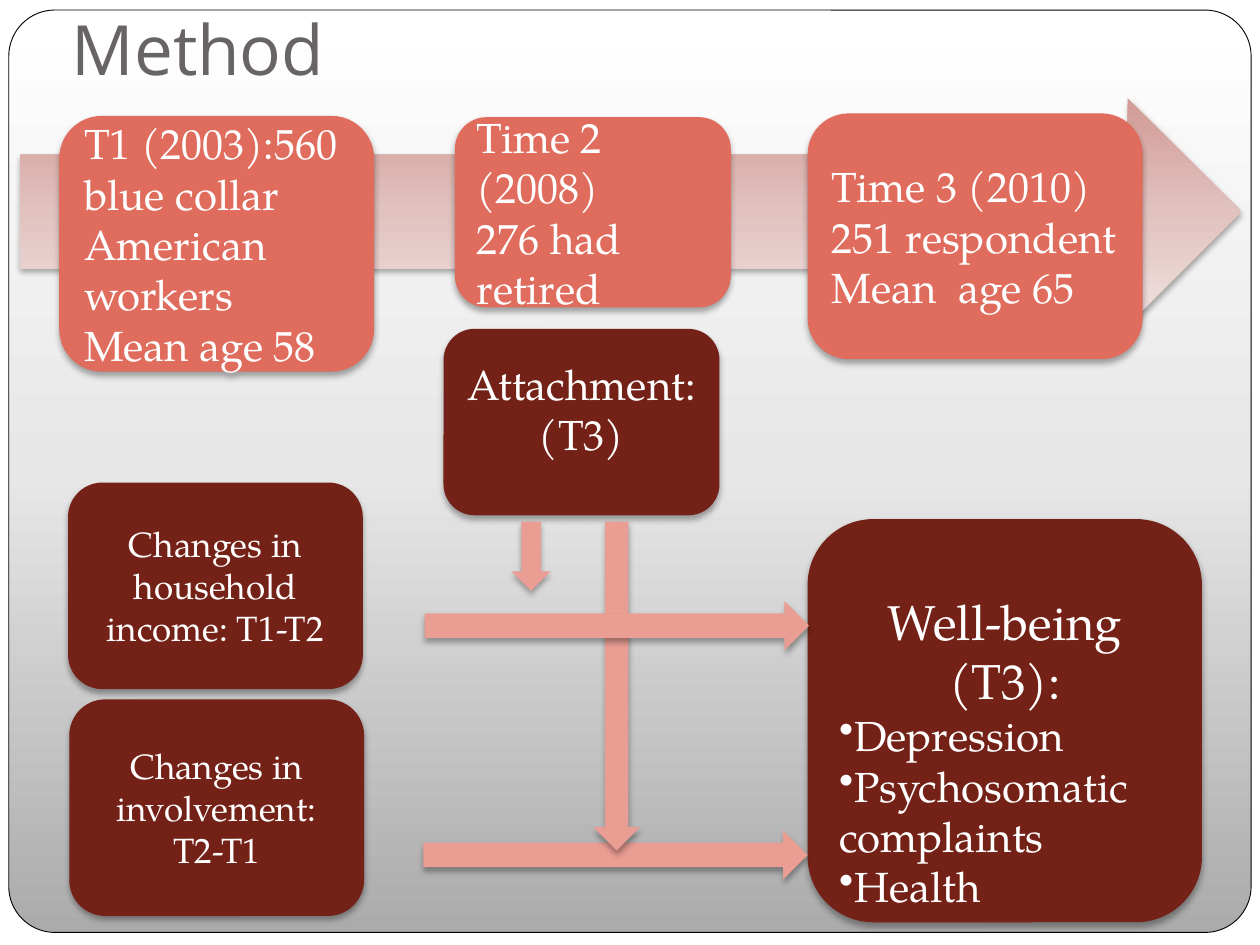
import pptx
import pptx.dml.color
import pptx.enum.shapes
import pptx.enum.text
import pptx.util
from lxml import etree
from pptx.oxml.ns import qn

Inches = pptx.util.Inches
Pt = pptx.util.Pt
Shape = pptx.enum.shapes.MSO_SHAPE
Anchor = pptx.enum.text.MSO_ANCHOR
Align = pptx.enum.text.PP_ALIGN

SERIF, SANS = "TeX Gyre Pagella", "Open Sans"
WHITE, GREY, BLACK = "FFFFFF", "696464", "000000"
MAROON, CORAL, PINK = "742217", "DF6C5D", "E99D93"
SILVER = [(0, "ABABAB"), (50, "E7E7E7"), (100, WHITE)]
ROSE = [(0, "D29A94"), (50, "E1C2BF"), (100, "F0E1E0")]


def rgb(hex_color):
    return pptx.dml.color.RGBColor.from_string(hex_color)


def apply(target, values):
    for name, value in values.items():
        setattr(target, name, value)


def add_xml(parent, tag, **attributes):
    return etree.SubElement(parent, qn(tag), attributes)


class MethodSlide:
    """Holds the style and the current slide."""

    def __init__(self, deck):
        self.slide = deck.slides.add_slide(deck.slide_layouts[6])
        background = self.slide.background.fill
        background.solid()
        background.fore_color.rgb = rgb(WHITE)

    def shape(self, kind, place, fill=None, shadow=True):
        item = self.slide.shapes.add_shape(kind, *map(Inches, place))
        item.line.fill.background()
        item.shadow.inherit = False
        if fill:
            item.fill.solid()
            item.fill.fore_color.rgb = rgb(fill)
        if shadow:
            effects = item._element.spPr.find(qn("a:effectLst"))
            cast = add_xml(effects, "a:outerShdw", blurRad=str(Pt(3.5)),
                           dist=str(Pt(2.2)), dir="5400000", rotWithShape="0")
            color = add_xml(cast, "a:srgbClr", val=BLACK)
            add_xml(color, "a:alpha", val="32000")
        return item

    def gradient(self, item, stops, angle):
        item.fill.gradient()
        item.fill.gradient_angle = 360 - angle
        stop_list = item._element.spPr.find(qn("a:gradFill")).find(qn("a:gsLst"))
        for old in list(stop_list):
            stop_list.remove(old)
        for position, color in stops:
            stop = add_xml(stop_list, "a:gs", pos=str(position * 1000))
            add_xml(stop, "a:srgbClr", val=color)

    def fill_text(self, frame, lines, font, color, align=Align.LEFT, **frame_format):
        """Each line is (text, size) or (text, size, bullet)."""
        apply(frame, {"word_wrap": True, "vertical_anchor": Anchor.MIDDLE, **frame_format})
        for index, (text, size, *bullet) in enumerate(lines):
            paragraph = frame.paragraphs[0] if index == 0 else frame.add_paragraph()
            paragraph.alignment = Align.LEFT if bullet else align
            if bullet:
                add_xml(paragraph._p.get_or_add_pPr(), "a:buChar", char=bullet[0])
            run = paragraph.add_run()
            run.text = text
            apply(run.font, {"name": font, "size": Pt(size)})
            run.font.color.rgb = rgb(color)

    def title(self, place, text):
        box = self.slide.shapes.add_textbox(*map(Inches, place))
        self.fill_text(box.text_frame, [(text, 39.6)], SANS, GREY,
                       vertical_anchor=Anchor.BOTTOM, margin_bottom=Inches(0.1))

    def card(self, place, fill, lines, align=Align.CENTER, **frame_format):
        item = self.shape(Shape.ROUNDED_RECTANGLE, place, fill)
        self.fill_text(item.text_frame, lines, SERIF, WHITE, align, **frame_format)

    def panel(self, place):
        item = self.shape(Shape.ROUNDED_RECTANGLE, place, shadow=False)
        item.adjustments[0] = 0.05
        self.gradient(item, SILVER, 270)
        item.line.color.rgb = rgb(BLACK)
        item.line.width = Pt(0.5)

    def timeline(self, place):
        self.gradient(self.shape(Shape.RIGHT_ARROW, place), ROSE, 90)


def main():
    deck = pptx.Presentation()
    apply(deck, {"slide_width": Inches(10), "slide_height": Inches(7.5)})
    method = MethodSlide(deck)

    # Frame, timeline and title
    method.panel((0.07, 0.08, 9.86, 7.32))
    method.timeline((0.16, 0.78, 9.69, 1.8))
    method.title((0.47, 0.17, 8.41, 0.64), "Method")

    # Model variables
    method.card((0.54, 3.83, 2.34, 1.64), MAROON,
                [("Changes in household income: T1-T2", 20)])
    method.card((0.55, 5.55, 2.34, 1.72), MAROON,
                [("Changes in involvement:", 20), ("T2-T1", 20)])
    outcomes = ["Depression", "Psychosomatic complaints", "Health"]
    method.card((6.41, 4.12, 3.13, 3.2), MAROON,
                [("Well-being (T3):", 28)] + [(name, 24, "•") for name in outcomes],
                margin_top=Inches(0.54))
    method.card((3.52, 2.61, 2.19, 1.48), MAROON,
                [("Attachment: (T3)", 24)], margin_bottom=Inches(0.26))

    # Effects and moderation
    for kind, place in [
        (Shape.RIGHT_ARROW, (3.36, 6.59, 3.05, 0.39)),
        (Shape.DOWN_ARROW, (4.06, 4.14, 0.31, 0.55)),
        (Shape.DOWN_ARROW, (4.71, 4.14, 0.37, 2.61)),
        (Shape.RIGHT_ARROW, (3.37, 4.77, 3.05, 0.39)),
    ]:
        method.shape(kind, place, PINK)

    # Measurement waves
    for place, lines in [
        ((0.47, 0.92, 2.5, 2.03),
         ["T1 (2003):560 blue collar American workers", "Mean age 58"]),
        ((3.61, 0.93, 2.19, 1.51), ["Time 2 (2008)", "276 had retired"]),
        ((6.41, 0.9, 2.66, 1.95),
         ["Time 3 (2010)", "251 respondent", "Mean  age 65"]),
    ]:
        method.card(place, CORAL, [(line, 24) for line in lines], Align.LEFT)

    deck.save("out.pptx")


if __name__ == "__main__":
    main()
